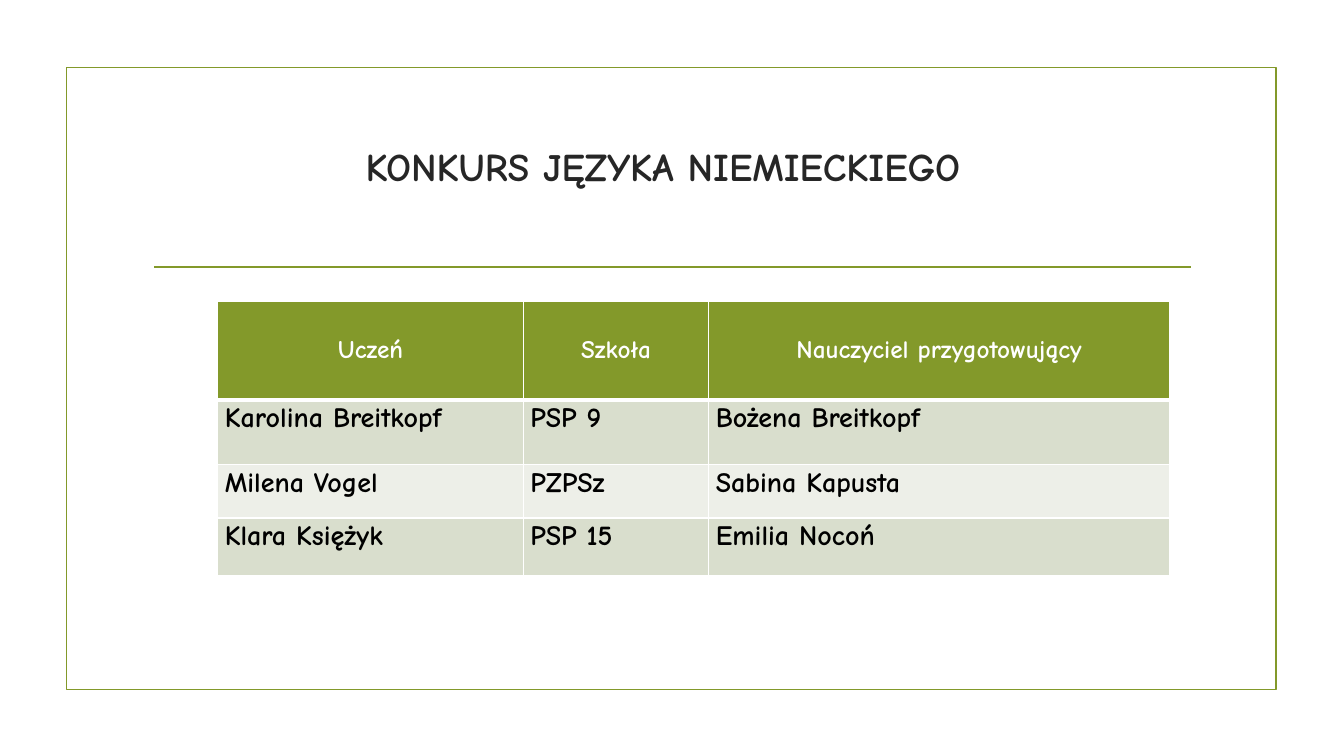
from dataclasses import dataclass

import pptx
import pptx.dml.color
import pptx.enum.shapes
import pptx.enum.text
import pptx.oxml.ns
import pptx.util
from lxml import etree

Inches, Pt = pptx.util.Inches, pptx.util.Pt
ALIGN, ANCHOR = pptx.enum.text.PP_ALIGN, pptx.enum.text.MSO_ANCHOR
qn = pptx.oxml.ns.qn
FONT, GREEN, WHITE = "Comic Neue", "83992A", "FFFFFF"


@dataclass
class Row:
    height: float
    fill: str
    texts: tuple[str, str, str]


COLUMN_WIDTHS = (3.03, 1.84, 4.57)
ROWS = (
    Row(0.98, GREEN, ("Uczeń", "Szkoła", "Nauczyciel przygotowujący")),
    Row(0.64, "D9DECD", ("Karolina Breitkopf", "PSP 9", "Bożena Breitkopf")),
    Row(0.53, "EDEFE8", ("Milena Vogel", "PZPSz", "Sabina Kapusta")),
    Row(0.57, "D9DECD", ("Klara Księżyk", "PSP 15", "Emilia Nocoń")),
)


def rgb(value: str) -> pptx.dml.color.RGBColor:
    """Return the colour for a hex string."""
    return pptx.dml.color.RGBColor.from_string(value)


def put_text(tf, text: str, *, size: float, color: str, align=ALIGN.LEFT,
             spacing: float = 1.0) -> None:
    """Fill a text frame with one bold formatted paragraph."""
    p = tf.paragraphs[0]
    p.alignment, p.line_spacing = align, spacing
    r = p.add_run()
    r.text = text
    r.font.name, r.font.size, r.font.bold = FONT, Pt(size), True
    r.font.color.rgb = rgb(color)


def style_line(sp) -> None:
    """Give a shape or connector the thin green line."""
    sp.line.color.rgb = rgb(GREEN)
    sp.line.width = Pt(1.25)


def add_border(cell, side: str, width: float) -> None:
    """Draw a white border on one side of a cell."""
    ln = etree.SubElement(cell._tc.get_or_add_tcPr(), qn(f"a:ln{side}"), w=str(Pt(width)))
    fill = etree.SubElement(ln, qn("a:solidFill"))
    etree.SubElement(fill, qn("a:srgbClr"), val=WHITE)


def format_cell(cell, text: str, fill: str, row: int) -> None:
    """Set the borders, fill, margins and text of a table cell."""
    header = row == 0
    for side in "LRTB":
        thick = (header and side == "B") or (row == 1 and side == "T")
        add_border(cell, side, 3 if thick else 1)
    cell.fill.solid()
    cell.fill.fore_color.rgb = rgb(fill)
    cell.margin_left = cell.margin_right = Inches(0.08 if header else 0.07)
    cell.margin_top = cell.margin_bottom = Inches(0.05 if header else 0)
    cell.vertical_anchor = ANCHOR.MIDDLE if header else ANCHOR.TOP
    if header:
        put_text(cell.text_frame, text, size=18, color=WHITE, align=ALIGN.CENTER)
    else:
        put_text(cell.text_frame, text, size=20, color="000000", spacing=1.07)


def add_frame(slide) -> None:
    """Add the green frame and the rule below the title."""
    sp = slide.shapes.add_shape(pptx.enum.shapes.MSO_SHAPE.RECTANGLE, Inches(0.66),
                                Inches(0.67), Inches(12), Inches(6.17))
    sp.shadow.inherit = False
    sp.fill.background()
    style_line(sp)
    rule = slide.shapes.add_connector(pptx.enum.shapes.MSO_CONNECTOR.STRAIGHT, Inches(1.53),
                                      Inches(2.65), Inches(11.81), Inches(2.65))
    etree.SubElement(rule._element.spPr, qn("a:effectLst"))
    style_line(rule)


def add_title(slide, text: str) -> None:
    """Place and format the title placeholder."""
    sp = slide.shapes.title
    sp.left, sp.top, sp.width, sp.height = map(Inches, (1.13, 0.95, 10.89, 1.4))
    sp.text_frame.vertical_anchor = ANCHOR.MIDDLE
    put_text(sp.text_frame, text, size=28, color="262626", align=ALIGN.CENTER)


def add_results(slide) -> None:
    """Add the table of pupils, schools and teachers."""
    table = slide.shapes.add_table(
        len(ROWS), len(COLUMN_WIDTHS), Inches(2.16), Inches(2.99),
        Inches(sum(COLUMN_WIDTHS)), Inches(sum(row.height for row in ROWS))).table
    for column, width in zip(table.columns, COLUMN_WIDTHS):
        column.width = Inches(width)
    for i, row in enumerate(ROWS):
        table.rows[i].height = Inches(row.height)
        for j, text in enumerate(row.texts):
            format_cell(table.cell(i, j), text, row.fill, i)


def main() -> None:
    """Build and save the slide."""
    prs = pptx.Presentation()
    prs.slide_width, prs.slide_height = Inches(13.33), Inches(7.5)
    slide = prs.slides.add_slide(prs.slide_layouts[5])
    add_frame(slide)
    add_title(slide, "KONKURS JĘZYKA NIEMIECKIEGO")
    add_results(slide)
    prs.save("out.pptx")


if __name__ == "__main__":
    main()
